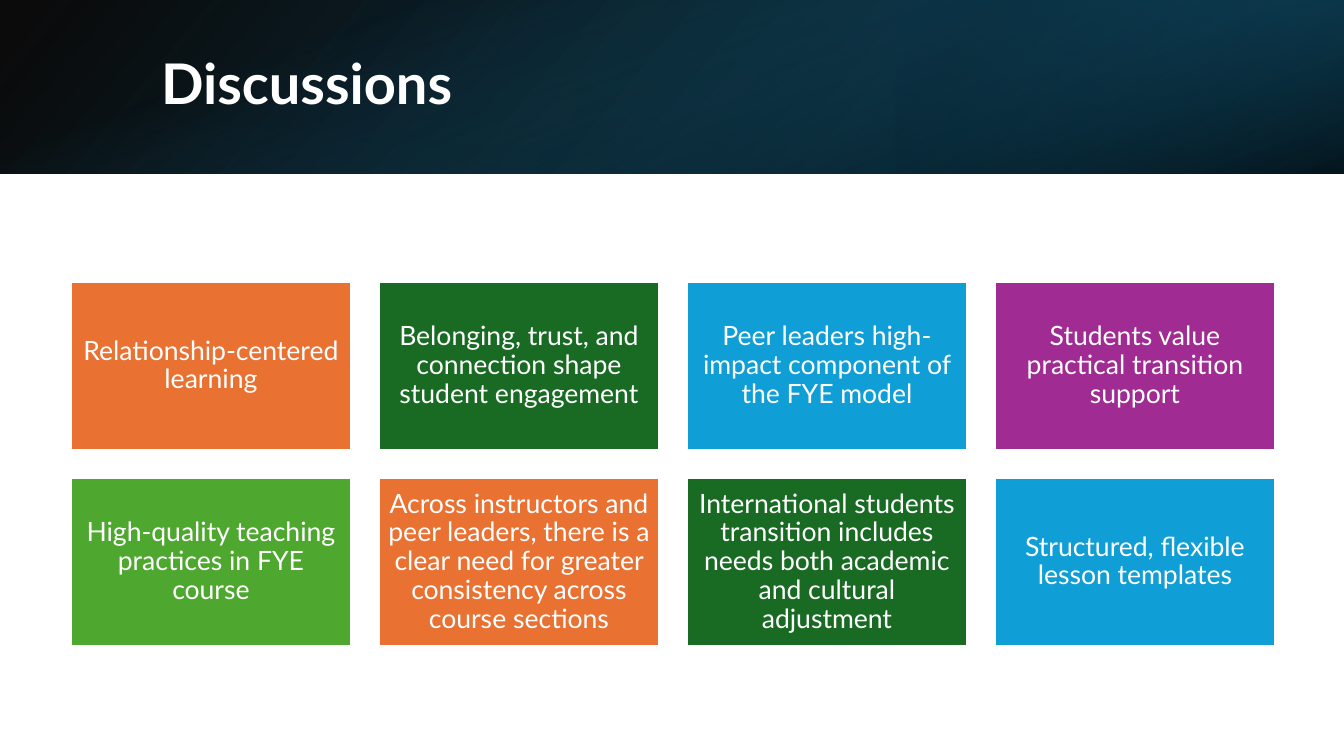
import pptx
import pptx.util
import pptx.dml.color
import pptx.enum.shapes
import pptx.enum.text
import pptx.oxml.ns
import lxml.etree

theme = {
    "font": "Lato", "white": "FFFFFF", "black": "000000",
    "navy": "104862", "deep": "0B3041", "teal": "156082",
    "orange": "E97132", "green": "196B24", "blue": "0F9ED5",
    "purple": "A02B93", "lime": "4EA72E",
    "title": 40, "body": 19, "line": 1.5,
}
scale = pptx.util.Inches(1) / 100.8
qn = pptx.oxml.ns.qn
align = pptx.enum.text.PP_ALIGN
rect = pptx.enum.shapes.MSO_SHAPE.RECTANGLE


def px(*sizes):
    return [round(size * scale) for size in sizes]


def write(shape, text, size, side, bold=False, inset=None):
    frame = shape.text_frame
    frame.text = text
    frame.word_wrap = True
    frame.auto_size = pptx.enum.text.MSO_AUTO_SIZE.NONE
    frame.vertical_anchor = pptx.enum.text.MSO_ANCHOR.MIDDLE
    if inset is not None:
        edge = px(inset)[0]
        frame.margin_left = frame.margin_right = edge
        frame.margin_top = frame.margin_bottom = edge
    para = frame.paragraphs[0]
    para.alignment = side
    para.line_spacing = 0.9
    font = para.runs[0].font
    font.name = theme["font"]
    font.size = pptx.util.Pt(size)
    font.bold = bold
    font.color.rgb = pptx.dml.color.RGBColor.from_string(theme["white"])


deck = pptx.Presentation()
deck.slide_width, deck.slide_height = px(1344, 756)
slide = deck.slides.add_slide(deck.slide_layouts[5])

bands = [
    ((0, 0, 1344, 174), 0, True, 140, [(0, "black", 96), (100, "navy", 100)]),
    ((896, 0, 448, 174), 180, True, 320, [(19, "deep", 68), (100, "teal", 79)]),
    ((585, -585, 174, 1344), 90, False, 340, [(23, "teal", 0), (99, "black", 74)]),
]
for box, turn, flip, angle, stops in bands:
    band = slide.shapes.add_shape(rect, *px(*box))
    band.shadow.inherit = False
    band.rotation = turn
    if flip:
        band._element.spPr.find(qn("a:xfrm")).set("flipH", "1")
    band.line.fill.background()
    band.fill.gradient()
    band.fill.gradient_angle = 360 - angle
    for stop, (place, name, _) in zip(band.fill.gradient_stops, stops):
        stop.position = place / 100
        stop.color.rgb = pptx.dml.color.RGBColor.from_string(theme[name])
    colors = band._element.spPr.iter(qn("a:srgbClr"))
    for color, (_, _, alpha) in zip(list(colors), stops):
        lxml.etree.SubElement(color, qn("a:alpha")).set("val", str(alpha * 1000))

title = slide.shapes.title
title.left, title.top, title.width, title.height = px(151, 38, 1107, 97)
write(title, "Discussions", theme["title"], align.LEFT, bold=True)
slide.shapes._spTree.append(title._element)

cards = [
    ("Relationship-centered learning", "orange"),
    ("Belonging, trust, and connection shape student engagement", "green"),
    ("Peer leaders high-impact component of the FYE model", "blue"),
    ("Students value practical transition support", "purple"),
    ("High-quality teaching practices in FYE course", "lime"),
    ("Across instructors and peer leaders, there is a clear need for greater "
     "consistency across course sections", "orange"),
    ("International students transition includes needs both academic and "
     "cultural adjustment", "green"),
    ("Structured, flexible lesson templates", "blue"),
]
wide, high, gap = 280, 168, 28
for index, (text, name) in enumerate(cards):
    row, col = divmod(index, 4)
    left = 71 + col * (wide + gap)
    top = 282 + row * (high + gap)
    card = slide.shapes.add_shape(rect, *px(left, top, wide, high))
    card.shadow.inherit = False
    card.fill.solid()
    card.fill.fore_color.rgb = pptx.dml.color.RGBColor.from_string(theme[name])
    card.line.color.rgb = pptx.dml.color.RGBColor.from_string(theme["white"])
    card.line.width = pptx.util.Pt(theme["line"])
    write(card, text, theme["body"], align.CENTER, inset=8)

deck.save("out.pptx")
